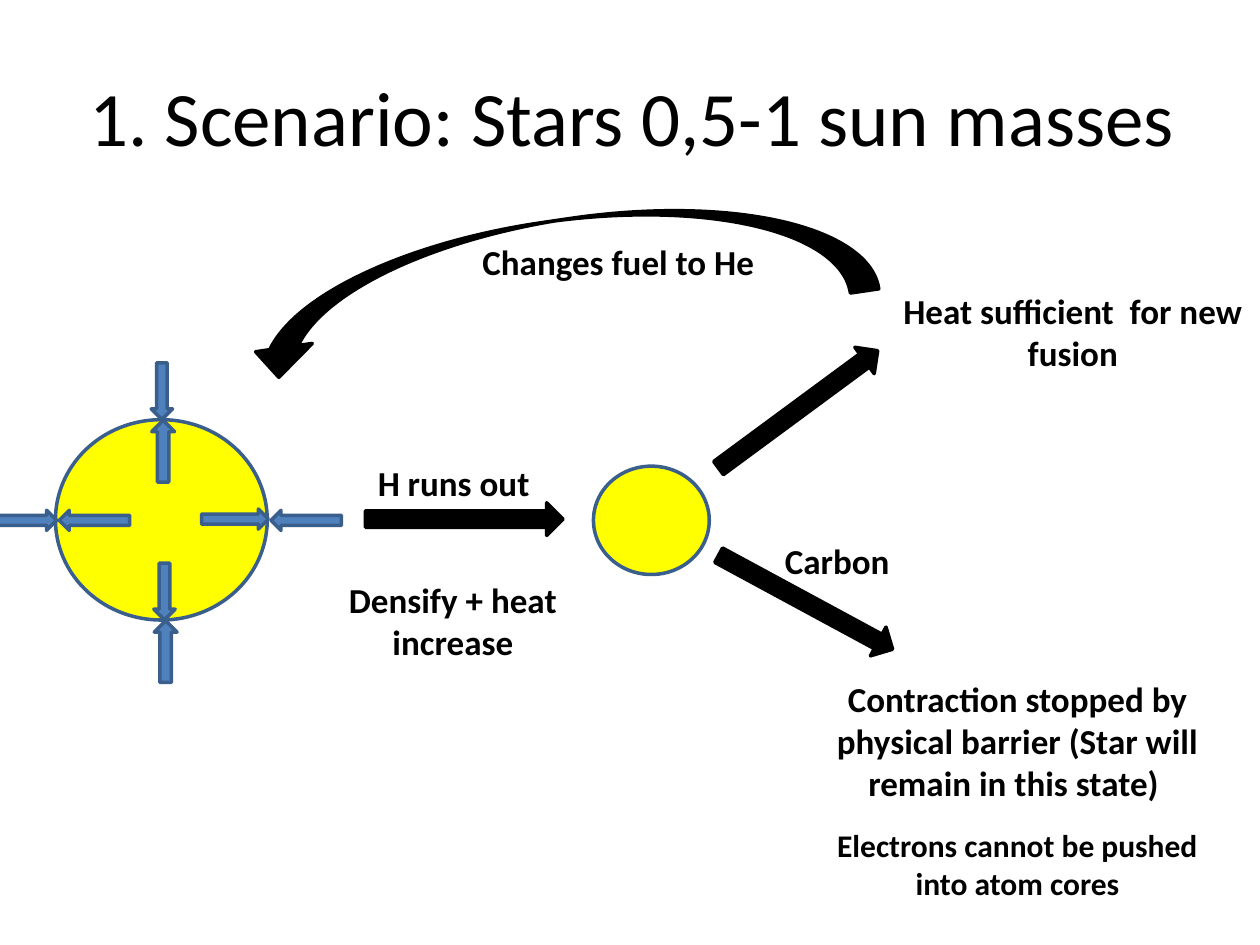
from dataclasses import dataclass

from pptx import Presentation
from pptx.dml.color import RGBColor
from pptx.enum.shapes import MSO_SHAPE
from pptx.enum.text import MSO_ANCHOR, PP_ALIGN
from pptx.util import Pt

COLORS = {"black": "000000", "star": "FFFF00", "force": "4F81BD", "edge": "3A5F8C"}
FONT = "Calibri"


@dataclass
class Figure:
    x: float
    y: float
    w: float
    h: float
    fill: str
    line: str
    kind: MSO_SHAPE = MSO_SHAPE.RIGHT_ARROW
    rot: float = 0


@dataclass
class Label:
    text: str
    x: float
    y: float
    w: float
    h: float
    size: float = 20
    align: PP_ALIGN = PP_ALIGN.CENTER


def star(x: float, y: float, w: float, h: float) -> Figure:
    return Figure(x, y, w, h, "star", "edge", MSO_SHAPE.OVAL)


def force(x: float, y: float, w: float, h: float, rot: float) -> Figure:
    return Figure(x, y, w, h, "force", "edge", rot=rot)


def step(x: float, y: float, rot: float) -> Figure:
    return Figure(x, y, 113, 18.7, "black", "black", rot=rot)


FORCE_SIZES = {0: (38.2, 11.5), 90: (32.4, 12.2), 180: (40.3, 11.5), 270: (35.3, 13)}
FORCE_PLACES = {
    0: [(115.2, 290.9), (-5.8, 291.6)],
    90: [(76.3, 217.4), (77.8, 331.9)],
    180: [(154.8, 291.6), (33.8, 291.6)],
    270: [(75.6, 251.3), (77, 365.8)],
}

FIGURES = [
    star(31.7, 239.8, 121, 114.5),
    *[force(x, y, *FORCE_SIZES[rot], rot)
      for rot, places in FORCE_PLACES.items() for x, y in places],
    star(339.1, 266.4, 66.2, 61.9),
    step(208.8, 287.3, 0),
    step(399.6, 224.6, 323.6),
    step(403.9, 334.8, 28.4),
    Figure(285.1, -22.3, 65.5, 362.9, "black", "black",
           MSO_SHAPE.CURVED_RIGHT_ARROW, 81.6),
]

LABELS = [
    Label("Densify + heat increase", 166.3, 326.9, 185, 55.7),
    Label("Heat sufficient  for new fusion", 505.4, 162, 215.3, 55.7),
    Label("Contraction stopped by physical barrier (Star will remain in this state) ",
          460.8, 383.8, 241.2, 80),
    Label("H runs out", 208.8, 259.9, 156.2, 31.5, align=PP_ALIGN.LEFT),
    Label("Changes fuel to He", 268.6, 133.9, 213.8, 31.5, align=PP_ALIGN.LEFT),
    Label("Electrons cannot be pushed into atom cores", 460.8, 468.7, 241.2, 51, 18),
    Label("Carbon", 441.4, 304.6, 80.6, 31.5, align=PP_ALIGN.LEFT),
]


def rgb(name: str) -> RGBColor:
    return RGBColor.from_string(COLORS[name])


def add_figure(s, fig: Figure) -> None:
    sp = s.shapes.add_shape(fig.kind, Pt(fig.x), Pt(fig.y), Pt(fig.w), Pt(fig.h))
    sp.shadow.inherit = False
    sp.rotation = fig.rot
    sp.fill.solid()
    sp.fill.fore_color.rgb = rgb(fig.fill)
    sp.line.color.rgb = rgb(fig.line)
    sp.line.width = Pt(2)


def add_text(s, label: Label, *, bold: bool = True, color: str = "black",
             anchor: MSO_ANCHOR = MSO_ANCHOR.TOP) -> None:
    sp = s.shapes.add_textbox(Pt(label.x), Pt(label.y), Pt(label.w), Pt(label.h))
    tf = sp.text_frame
    tf.word_wrap = True
    tf.vertical_anchor = anchor
    p = tf.paragraphs[0]
    p.alignment = label.align
    r = p.add_run()
    r.text = label.text
    r.font.name = FONT
    r.font.size = Pt(label.size)
    r.font.bold = bold
    r.font.color.rgb = rgb(color)


def main() -> None:
    prs = Presentation()
    prs.slide_width, prs.slide_height = Pt(720), Pt(540)
    s = prs.slides.add_slide(prs.slide_layouts[6])
    title = Label("1. Scenario: Stars 0,5-1 sun masses", 37.4, 20.9, 648, 90, 44)
    add_text(s, title, bold=False, anchor=MSO_ANCHOR.MIDDLE)
    for fig in FIGURES:
        add_figure(s, fig)
    for label in LABELS:
        add_text(s, label)
    prs.save("out.pptx")


if __name__ == "__main__":
    main()
